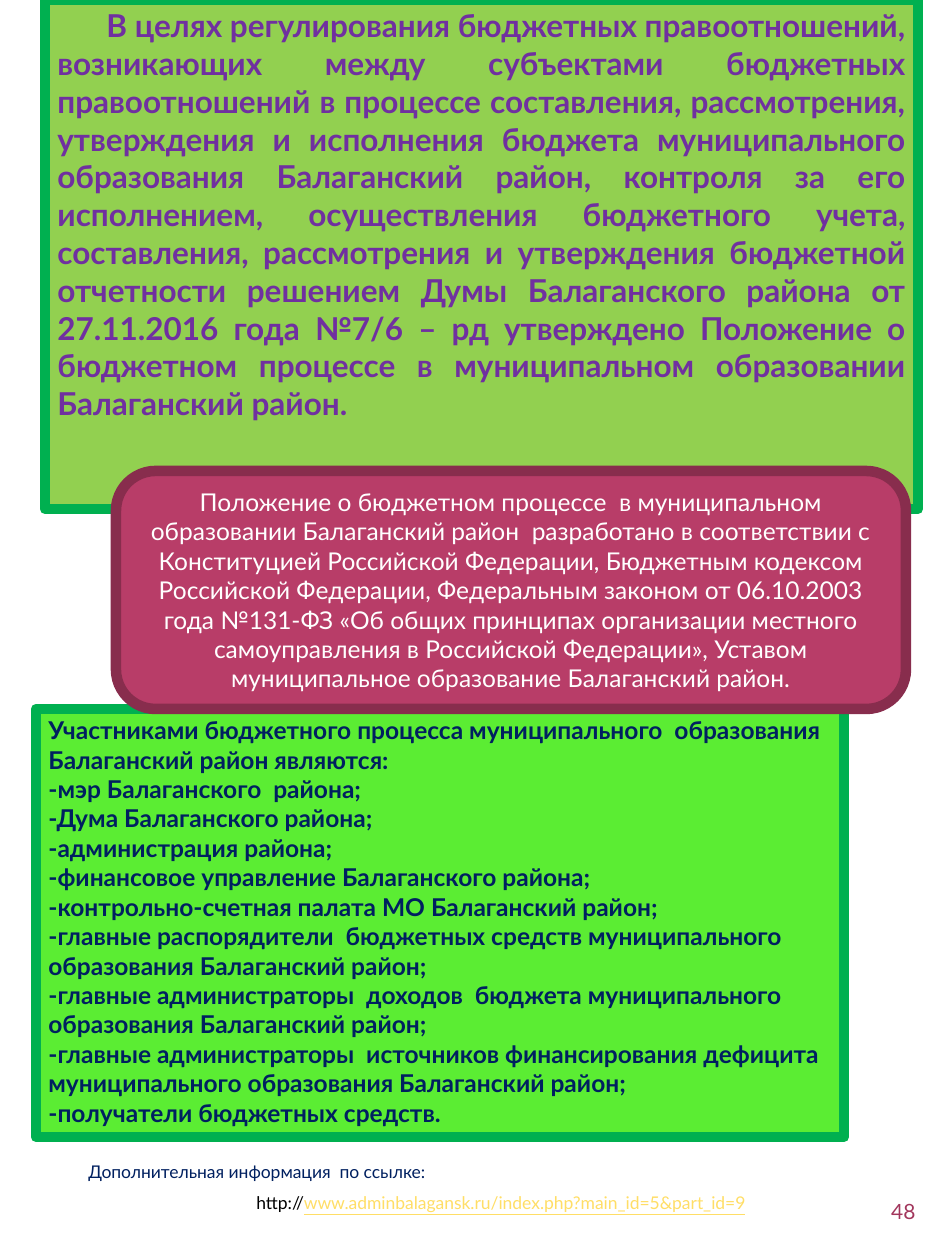
from lxml import etree
from pptx import Presentation
from pptx import util as u
from pptx.dml.color import RGBColor
from pptx.enum import shapes, text
from pptx.oxml.ns import qn

EMU_PER_PX = 914400 / 126
ALIGN = text.PP_ALIGN
ANCHOR = text.MSO_ANCHOR

REGULATION = (
    "В целях регулирования бюджетных правоотношений, возникающих между субъектами "
    "бюджетных правоотношений в процессе составления, рассмотрения, утверждения и "
    "исполнения бюджета муниципального образования Балаганский район, контроля за его "
    "исполнением, осуществления бюджетного учета, составления, рассмотрения и "
    "утверждения бюджетной отчетности решением Думы Балаганского района от 27.11.2016 "
    "года №7/6 – рд утверждено Положение о бюджетном процессе в муниципальном "
    "образовании Балаганский район."
)
LEGAL_BASIS = (
    "Положение о бюджетном процессе  в муниципальном образовании Балаганский район  "
    "разработано в соответствии с Конституцией Российской Федерации, Бюджетным кодексом "
    "Российской Федерации, Федеральным законом от 06.10.2003 года №131-ФЗ «Об общих "
    "принципах организации местного самоуправления в Российской Федерации», Уставом "
    "муниципальное образование Балаганский район."
)
PARTICIPANTS = [
    "Участниками бюджетного процесса муниципального  образования  Балаганский район являются:",
    "-мэр Балаганского  района;",
    "-Дума Балаганского района;",
    "-администрация района;",
    "-финансовое управление Балаганского района;",
    "-контрольно-счетная палата МО Балаганский район;",
    "-главные распорядители  бюджетных средств муниципального образования Балаганский район;",
    "-главные администраторы  доходов  бюджета муниципального образования Балаганский район;",
    "-главные администраторы  источников финансирования дефицита муниципального "
    "образования Балаганский район;",
    "-получатели бюджетных средств.",
]


def px(length):
    return u.Emu(round(length * EMU_PER_PX))


def color(hex_code):
    return RGBColor.from_string(hex_code)


class Page:
    """Holds the font, the border width and the current slide."""

    font_name = "Lato"
    border_pt = 6

    def __init__(self, slide):
        self.slide = slide

    def fill_text(self, box, lines, size, hex_code, bold=False,
                  align=ALIGN.LEFT, anchor=ANCHOR.TOP):
        frame = box.text_frame
        frame.word_wrap = True
        frame.vertical_anchor = anchor
        frame.text = "\n".join(lines)
        for para in frame.paragraphs:
            para.alignment = align
            para.font.name = self.font_name
            para.font.size = u.Pt(size)
            para.font.bold = bold
            para.font.color.rgb = color(hex_code)

    def panel(self, kind, bounds, fill, border, lines, size, hex_code, **style):
        box = self.slide.shapes.add_shape(kind, *map(px, bounds))
        box.shadow.inherit = False
        box.fill.solid()
        box.fill.fore_color.rgb = color(fill)
        box.line.color.rgb = color(border)
        box.line.width = u.Pt(self.border_pt)
        outline = box.fill._xPr.find(qn("a:ln"))
        etree.SubElement(outline, qn("a:round"))
        self.fill_text(box, lines, size, hex_code, **style)
        return box

    def label(self, bounds, line, size, hex_code, **style):
        box = self.slide.shapes.add_textbox(*map(px, bounds))
        self.fill_text(box, [line], size, hex_code, **style)
        return box


def main():
    deck = Presentation()
    deck.slide_width, deck.slide_height = px(945), px(1260)
    page = Page(deck.slides.add_slide(deck.slide_layouts[6]))
    rectangle = shapes.MSO_SHAPE.RECTANGLE
    rounded = shapes.MSO_SHAPE.ROUNDED_RECTANGLE

    page.label((850, 1189, 78, 45), "48", 12, "A2365C",
               align=ALIGN.RIGHT, anchor=ANCHOR.MIDDLE)
    regulation = page.panel(rectangle, (45, 0, 873, 509), "92D050", "00B050",
                            [REGULATION], 18, "7030A0", bold=True, align=ALIGN.JUSTIFY)
    regulation.text_frame.paragraphs[0]._p.get_or_add_pPr().set("indent", str(px(49)))
    page.panel(rectangle, (36, 709, 808, 428), "5BED33", "00B050",
               PARTICIPANTS, 14, "002060", bold=True)
    page.panel(rounded, (116, 471, 790, 238), "B83D68", "882D4D",
               [LEGAL_BASIS], 14, "FFFFFF", align=ALIGN.CENTER, anchor=ANCHOR.MIDDLE)

    address = page.label((244, 1186, 625, 34), "http://", 10, "000000")
    span = address.text_frame.paragraphs[0].add_run()
    span.text = "www.adminbalagansk.ru/index.php?main_id=5&part_id=9"
    span.font.color.rgb = color("FFDE66")
    span.font.underline = True
    page.label((76, 1155, 472, 34), "Дополнительная информация  по ссылке:", 10, "002060")

    deck.save("out.pptx")


if __name__ == "__main__":
    main()
